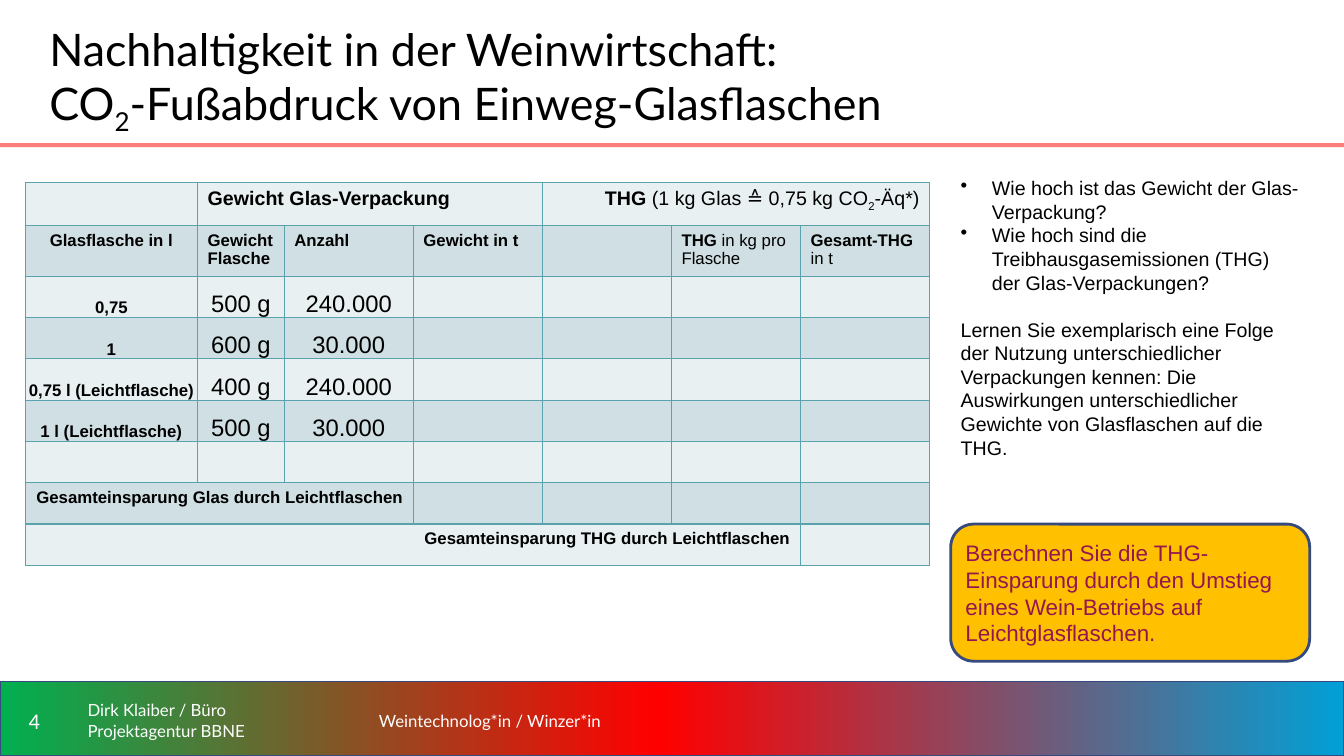
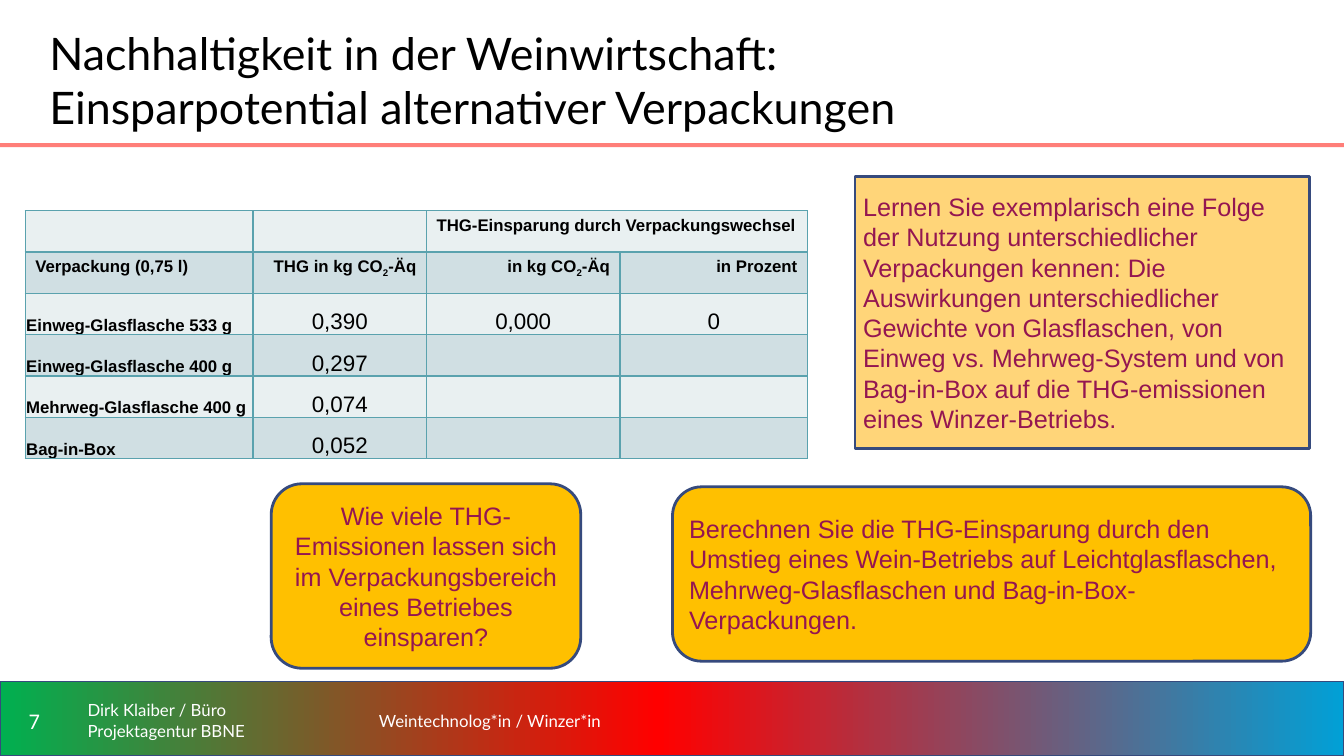
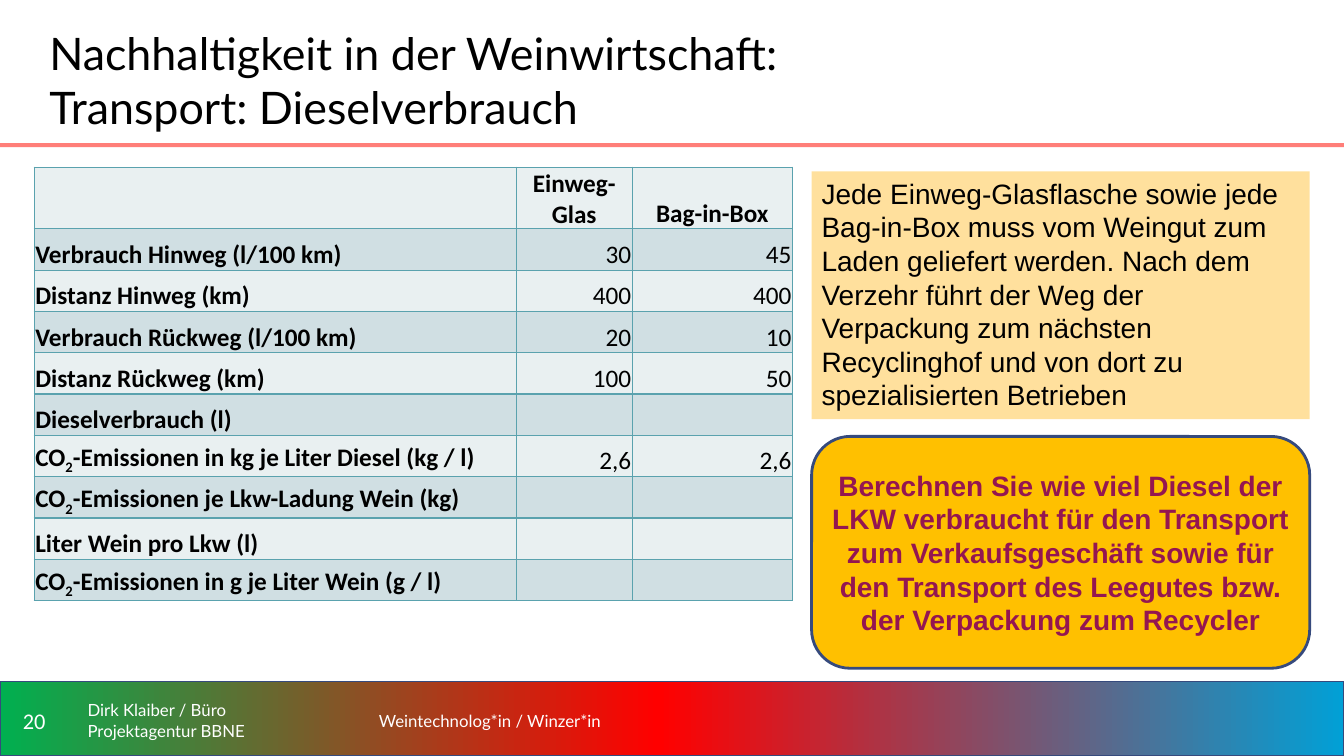
from dataclasses import dataclass
from typing import NamedTuple

from pptx import Presentation
from pptx.dml.color import RGBColor
from pptx.enum.shapes import MSO_SHAPE
from pptx.enum.text import MSO_ANCHOR, PP_ALIGN
from pptx.oxml import parse_xml
from pptx.oxml.ns import nsdecls, qn
from pptx.util import Inches, Pt


@dataclass(frozen=True)
class Theme:
    title_font: str = "Lato"
    body_font: str = "Arial"
    number_font: str = "Calibri"
    text: str = "000000"
    light: str = "FFFFFF"
    accent_text: str = "941651"
    outline: str = "364A7D"
    rule: str = "FF7E79"
    task: str = "FFC000"
    hint: str = "FFD579"
    grid: str = "5AA2AE"
    stripes: tuple = ("E9F0F1", "D0DFE3")
    band: tuple = ((0, "00B050"), (49, "FF0000"), (100, "01A0D6"))
    title_size: int = 32
    lead_size: int = 20
    task_size: int = 18
    small_task_size: int = 16
    list_size: int = 14
    footer_size: int = 12


THEME = Theme()


class Box(NamedTuple):
    left: float
    top: float
    width: float
    height: float

    def lengths(self):
        return [Inches(value) for value in self]


@dataclass(frozen=True)
class TextStyle:
    size: int
    font: str = THEME.body_font
    color: str = THEME.text
    bold: bool = False
    align: PP_ALIGN = PP_ALIGN.LEFT
    anchor: MSO_ANCHOR = MSO_ANCHOR.TOP
    margins: tuple = (0.1, 0.05, 0.1, 0.05)


LEFT, CENTER, RIGHT = PP_ALIGN.LEFT, PP_ALIGN.CENTER, PP_ALIGN.RIGHT
MIDDLE, BOTTOM = MSO_ANCHOR.MIDDLE, MSO_ANCHOR.BOTTOM
TIGHT = (0.01, 0.01, 0.01, 0)
CALLOUT = (0.08, 0, 0.08, 0)

TITLE = TextStyle(THEME.title_size, THEME.title_font, anchor=MIDDLE)
FOOTER = TextStyle(THEME.footer_size, THEME.title_font, THEME.light, anchor=MIDDLE)
PAGE_NUMBER = TextStyle(16, THEME.number_font, THEME.light, align=CENTER, anchor=MIDDLE)


def task_style(size, align=LEFT, bold=False, margins=CALLOUT):
    return TextStyle(size, color=THEME.accent_text, bold=bold, align=align,
                     anchor=MIDDLE, margins=margins)


def head_style(align=LEFT, size=12):
    return TextStyle(size, bold=True, align=align)


def body_style(size, align=LEFT, bold=False, font=THEME.body_font):
    return TextStyle(size, font, bold=bold, align=align, anchor=BOTTOM, margins=TIGHT)


def rgb(color):
    return RGBColor.from_string(color)


def write_spans(para, text, style):
    """Writes text in which | toggles bold and ~ toggles subscript."""
    bold, lowered, chunk = style.bold, False, ""
    for sign in text + "\0":
        if sign not in "|~\n\0":
            chunk += sign
            continue
        if chunk:
            span = para.add_run()
            span.text = chunk
            if bold != style.bold:
                span.font.bold = bold
            if lowered:
                span.font._element.set("baseline", "-25000")
            chunk = ""
        if sign == "|":
            bold = not bold
        elif sign == "~":
            lowered = not lowered
        elif sign == "\n":
            para.add_line_break()


def style_paragraph(para, style):
    para.alignment = style.align
    para.font.name = style.font
    para.font.size = Pt(style.size)
    para.font.bold = style.bold
    para.font.color.rgb = rgb(style.color)


def set_margins(holder, margins):
    sides = ("margin_left", "margin_top", "margin_right", "margin_bottom")
    for side, value in zip(sides, margins):
        setattr(holder, side, Inches(value))


def fill_frame(frame, text, style):
    frame.word_wrap = True
    frame.vertical_anchor = style.anchor
    set_margins(frame, style.margins)
    para = frame.paragraphs[0]
    style_paragraph(para, style)
    write_spans(para, text, style)
    return para


def text_box(page, box, text, style):
    return fill_frame(page.shapes.add_textbox(*box.lengths()).text_frame, text, style)


def panel(page, box, fill, kind=MSO_SHAPE.RECTANGLE, line_width=0, opacity=100):
    shape = page.shapes.add_shape(kind, *box.lengths())
    shape.shadow.inherit = False
    shape.fill.solid()
    shape.fill.fore_color.rgb = rgb(fill)
    if opacity < 100:
        color = shape._element.spPr.find(qn("a:solidFill"))[0]
        color.append(parse_xml(f'<a:alpha {nsdecls("a")} val="{opacity * 1000}"/>'))
    if line_width:
        shape.line.color.rgb = rgb(THEME.outline)
        shape.line.width = Pt(line_width)
    else:
        shape.line.fill.background()
    return shape


def callout(page, box, text, style, fill=THEME.task, kind=MSO_SHAPE.ROUNDED_RECTANGLE):
    shape = panel(page, box, fill, kind, line_width=2)
    fill_frame(shape.text_frame, text, style)


def footer_band(page, box, number):
    band = panel(page, box, THEME.rule, line_width=1)
    stops = "".join(
        f'<a:gs pos="{place * 1000}"><a:srgbClr val="{color}"/></a:gs>'
        for place, color in THEME.band)
    solid = band._element.spPr.find(qn("a:solidFill"))
    solid.getparent().replace(solid, parse_xml(
        f'<a:gradFill {nsdecls("a")}><a:gsLst>{stops}</a:gsLst>'
        '<a:lin ang="0" scaled="0"/></a:gradFill>'))
    top, height = box.top + 0.08, 0.61
    text_box(page, Box(box.left, top, 0.68, height), str(number), PAGE_NUMBER)
    text_box(page, Box(box.left + 0.77, top, 2.78, height),
             "Dirk Klaiber / Büro\nProjektagentur BBNE", FOOTER)
    course = text_box(page, Box(box.left + 3.66, top, 4.19, height),
                      "Weintechnolog*in / Winzer*in", FOOTER)
    course.line_spacing = 1.1


def new_page(deck, number, topic):
    page = deck.slides.add_slide(deck.slide_layouts[6])
    footer_band(page, Box(0, 6.76, 13.33, 0.74), number)
    panel(page, Box(0, 1.42, 13.33, 0.04), THEME.rule)
    text_box(page, Box(0.39, 0.2, 9.61, 1.18),
             f"Nachhaltigkeit in der Weinwirtschaft:\n{topic}", TITLE)
    return page


def style_cell(cell, text, style, fill):
    cell.fill.solid()
    cell.fill.fore_color.rgb = rgb(fill)
    cell.vertical_anchor = style.anchor
    set_margins(cell, style.margins)
    properties = cell._tc.get_or_add_tcPr()
    for place, side in enumerate(("lnL", "lnR", "lnT", "lnB")):
        properties.insert(place, parse_xml(
            f'<a:{side} {nsdecls("a")} w="12700"><a:solidFill>'
            f'<a:srgbClr val="{THEME.grid}"/></a:solidFill></a:{side}>'))
    para = cell.text_frame.paragraphs[0]
    style_paragraph(para, style)
    write_spans(para, text, style)


def data_table(page, left, top, widths, rows, merges=()):
    heights = [height for height, _, _ in rows]
    box = Box(left, top, sum(widths), sum(heights))
    table = page.shapes.add_table(len(rows), len(widths), *box.lengths()).table
    table.first_row = table.horz_banding = False
    for column, width in zip(table.columns, widths):
        column.width = Inches(width)
    for index, (height, styles, texts) in enumerate(rows):
        table.rows[index].height = Inches(height)
        for place, style in enumerate(styles):
            text = texts[place] if place < len(texts) else ""
            style_cell(table.cell(index, place), text, style, THEME.stripes[index % 2])
    for row, first, last in merges:
        table.cell(row, first).merge(table.cell(row, last))


def question_list(page, box, questions, closing):
    style = TextStyle(THEME.list_size)
    frame = panel(page, box, THEME.light, opacity=73).text_frame
    fill_frame(frame, questions[0], style)
    for text in (*questions[1:], closing):
        para = frame.add_paragraph()
        style_paragraph(para, style)
        write_spans(para, text, style)
    for para in frame.paragraphs[:len(questions)]:
        properties = para._p.get_or_add_pPr()
        properties.set("marL", str(Inches(0.31)))
        properties.set("indent", str(-Inches(0.31)))
        properties.insert(0, parse_xml(f'<a:buChar {nsdecls("a")} char="•"/>'))
    frame.paragraphs[-1].space_before = Pt(17)


def glass_page(deck):
    page = new_page(deck, 4, "CO~2~-Fußabdruck von Einweg-Glasflaschen")
    callout(page, Box(9.43, 5.2, 3.56, 1.36),
            "Berechnen Sie die THG-Einsparung durch den Umstieg eines Wein-Betriebs "
            "auf Leichtglasflaschen.", task_style(THEME.small_task_size))
    question_list(
        page, Box(9.43, 1.7, 3.56, 2.93),
        ["Wie hoch ist das Gewicht der Glas-Verpackung?",
         "Wie hoch sind die Treibhausgasemissionen (THG) der Glas-Verpackungen?"],
        "Lernen Sie exemplarisch eine Folge der Nutzung unterschiedlicher Verpackungen "
        "kennen: Die Auswirkungen unterschiedlicher Gewichte von Glasflaschen auf die THG.")
    groups = [head_style(size=14)] * 3 + [head_style(RIGHT, 14)] * 4
    heads = [head_style(CENTER)] + [head_style()] * 6
    body = [body_style(12, CENTER, True)] + [body_style(17, CENTER)] * 6
    totals = [head_style(RIGHT)] * 7
    bottles = [("0,75", "500 g", "240.000"), ("1", "600 g", "30.000"),
               ("0,75 l (Leichtflasche)", "400 g", "240.000"),
               ("1 l (Leichtflasche)", "500 g", "30.000"), ()]
    rows = [
        (0.43, groups, ("", "Gewicht Glas-Verpackung", "", "",
                        "THG |(1 kg Glas ≙ 0,75 kg CO~2~-Äq*)")),
        (0.5, heads, ("Glasflasche in l", "Gewicht Flasche", "Anzahl", "Gewicht in t", "",
                      "THG| in kg pro Flasche", "Gesamt-THG| in t")),
        *((0.41, body, bottle) for bottle in bottles),
        (0.41, totals, ("Gesamteinsparung Glas durch Leichtflaschen",)),
        (0.41, totals, ("Gesamteinsparung THG durch Leichtflaschen",)),
    ]
    data_table(page, 0.25, 1.81, [1.71, 0.86] + [1.28] * 5, rows,
               [(0, 1, 3), (0, 4, 6), (7, 0, 2), (8, 0, 5)])


def packaging_page(deck):
    page = new_page(deck, 7, "Einsparpotential alternativer Verpackungen")
    callout(page, Box(6.67, 4.83, 6.33, 1.73),
            "Berechnen Sie die THG-Einsparung durch den Umstieg eines Wein-Betriebs auf "
            "Leichtglasflaschen, Mehrweg-Glasflaschen und Bag-in-Box-Verpackungen.",
            task_style(THEME.task_size))
    callout(page, Box(8.48, 1.75, 4.51, 2.7),
            "Lernen Sie exemplarisch eine Folge der Nutzung unterschiedlicher Verpackungen "
            "kennen: Die Auswirkungen unterschiedlicher Gewichte von Glasflaschen, von "
            "Einweg vs. Mehrweg-System und von Bag-in-Box auf die THG-emissionen eines "
            "Winzer-Betriebs.",
            task_style(THEME.task_size), THEME.hint, MSO_SHAPE.RECTANGLE)
    callout(page, Box(2.69, 4.8, 3.07, 1.83),
            "Wie viele THG-Emissionen lassen sich im Verpackungsbereich eines Betriebes "
            "einsparen?", task_style(THEME.task_size, CENTER))
    heads = [head_style()] + [head_style(RIGHT)] * 3
    body = [body_style(12, bold=True)] + [body_style(16, CENTER)] * 3
    packages = [("Einweg-Glasflasche 533 g", "0,390", "0,000", "0"),
                ("Einweg-Glasflasche 400 g", "0,297"),
                ("Mehrweg-Glasflasche 400 g", "0,074"), ("Bag-in-Box", "0,052")]
    rows = [
        (0.41, [head_style()] * 4, ("", "", "THG-Einsparung durch Verpackungswechsel")),
        (0.41, heads, ("Verpackung (0,75 l)", "THG in kg CO~2~-Äq", "in kg CO~2~-Äq",
                       "in Prozent")),
        *((0.41, body, package) for package in packages),
    ]
    data_table(page, 0.25, 2.09, [2.26, 1.72, 1.92, 1.86], rows, [(0, 2, 3)])


def transport_page(deck):
    page = new_page(deck, 20, "Transport: Dieselverbrauch")
    font = THEME.number_font
    heads = [body_style(18, CENTER, True, font)] * 3
    body = [body_style(18, LEFT, True, font)] + [body_style(18, RIGHT, False, font)] * 2
    values = [("Verbrauch Hinweg (l/100 km)", "30", "45"),
              ("Distanz Hinweg (km)", "400", "400"),
              ("Verbrauch Rückweg (l/100 km)", "20", "10"),
              ("Distanz Rückweg (km)", "100", "50"),
              ("Dieselverbrauch (l)",),
              ("CO~2~-Emissionen in kg je Liter Diesel (kg / l)", "2,6", "2,6"),
              ("CO~2~-Emissionen je Lkw-Ladung Wein (kg)",),
              ("Liter Wein pro Lkw (l)",),
              ("CO~2~-Emissionen in g je Liter Wein (g / l)",)]
    rows = [(0.6, heads, ("", "Einweg-Glas", "Bag-in-Box")),
            *((0.41, body, value) for value in values)]
    data_table(page, 0.34, 1.66, [4.78, 1.15, 1.59], rows)
    callout(page, Box(8.05, 4.33, 4.94, 2.3),
            "Berechnen Sie wie viel Diesel der LKW verbraucht für den Transport zum "
            "Verkaufsgeschäft sowie für den Transport des Leegutes bzw. der Verpackung "
            "zum Recycler",
            task_style(THEME.lead_size, CENTER, True, (0, 0, 0, 0)))
    hint = panel(page, Box(8.05, 1.7, 4.94, 2.46), THEME.hint, opacity=73)
    fill_frame(hint.text_frame,
               "Jede Einweg-Glasflasche sowie jede Bag-in-Box muss vom Weingut zum Laden "
               "geliefert werden. Nach dem Verzehr führt der Weg der Verpackung zum nächsten "
               "Recyclinghof und von dort zu spezialisierten Betrieben",
               TextStyle(THEME.lead_size))


def main():
    deck = Presentation()
    deck.slide_width, deck.slide_height = Inches(13.33), Inches(7.5)
    for build in (glass_page, packaging_page, transport_page):
        build(deck)
    deck.save("out.pptx")


if __name__ == "__main__":
    main()
